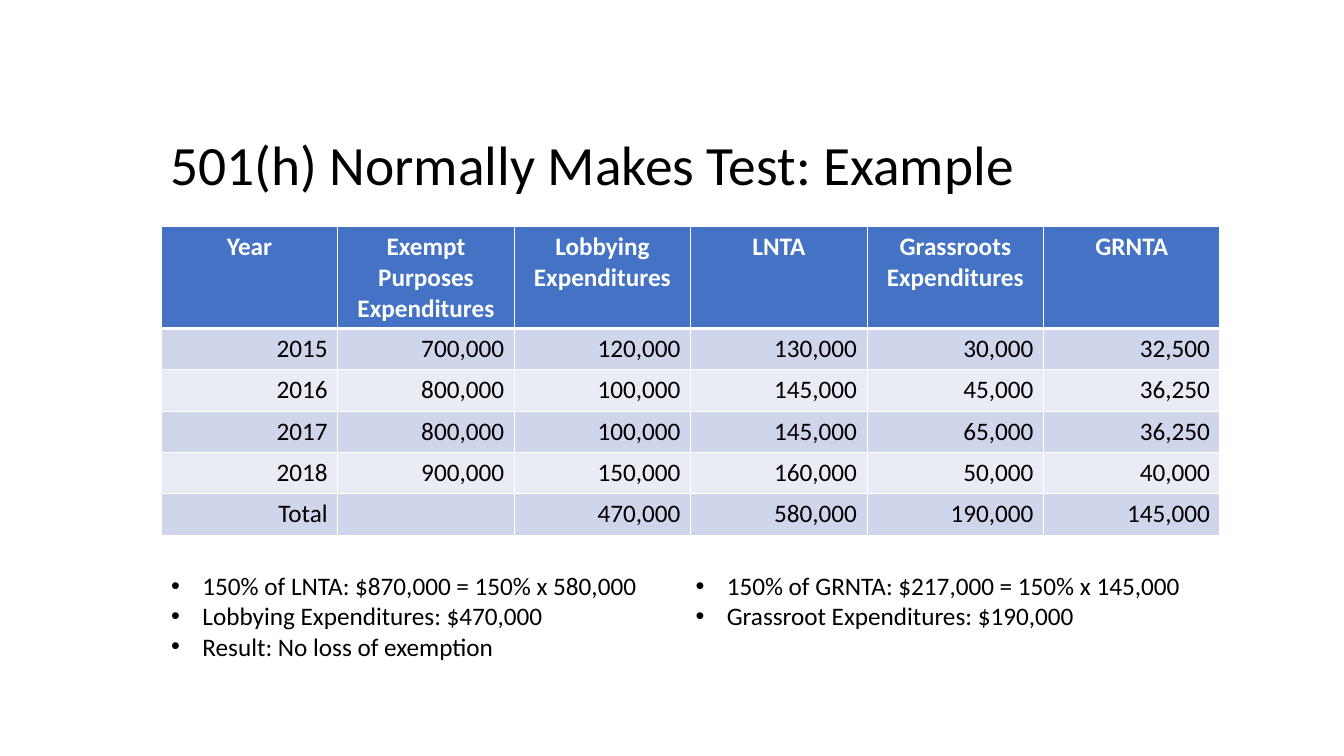
from lxml import etree
from pptx import Presentation
from pptx.dml.color import RGBColor
from pptx.enum.text import MSO_ANCHOR, PP_ALIGN
from pptx.oxml.ns import qn
from pptx.util import Inches, Pt

MIDDLE = MSO_ANCHOR.MIDDLE
LEFT, CENTER, RIGHT = PP_ALIGN.LEFT, PP_ALIGN.CENTER, PP_ALIGN.RIGHT
COLORS = {"text": "000000", "white": "FFFFFF", "head": "4472C4",
          "odd": "CFD5EA", "even": "E9EBF5"}

ROWS = [
    ["Year", "Exempt Purposes Expenditures", "Lobbying Expenditures",
     "LNTA", "Grassroots Expenditures", "GRNTA"],
    ["2015", "700,000", "120,000", "130,000", "30,000", "32,500"],
    ["2016", "800,000", "100,000", "145,000", "45,000", "36,250"],
    ["2017", "800,000", "100,000", "145,000", "65,000", "36,250"],
    ["2018", "900,000", "150,000", "160,000", "50,000", "40,000"],
    ["Total", "", "470,000", "580,000", "190,000", "145,000"],
]
LOBBY = ["150% of LNTA: $870,000 = 150% x 580,000",
         "Lobbying Expenditures: $470,000",
         "Result: No loss of exemption"]
GRASS = ["150% of GRNTA: $217,000 = 150% x 145,000",
         "Grassroot Expenditures: $190,000"]


class Deck:
    font = "Calibri"
    size = 18

    def __init__(self):
        self.prs = Presentation()
        self.prs.slide_width = Inches(13.33)
        self.prs.slide_height = Inches(7.5)
        self.slide = self.prs.slides.add_slide(self.prs.slide_layouts[6])

    def style(self, para, size=size, color="text", bold=False, align=LEFT):
        para.alignment = align
        para.font.name = self.font
        para.font.size = Pt(size)
        para.font.bold = bold
        para.font.color.rgb = RGBColor.from_string(COLORS[color])

    def box(self, left, top, width, height):
        shape = self.slide.shapes.add_textbox(
            Inches(left), Inches(top), Inches(width), Inches(height))
        shape.text_frame.word_wrap = True
        return shape.text_frame

    def title(self, text, *area):
        frame = self.box(*area)
        frame.vertical_anchor = MIDDLE
        frame.margin_top, frame.margin_bottom = Inches(0.6), 0
        para = frame.paragraphs[0]
        para.text = text
        para.line_spacing = 0.9
        self.style(para, 39.6)

    def bullets(self, lines, *area):
        frame = self.box(*area)
        frame.text = "\n".join(lines)
        for para in frame.paragraphs:
            self.style(para)
            props = para._p.get_or_add_pPr()
            props.set("marL", str(Inches(0.31)))
            props.set("indent", str(-Inches(0.31)))
            font = etree.SubElement(props, qn("a:buFont"))
            font.set("typeface", "Arial")
            etree.SubElement(props, qn("a:buChar")).set("char", "•")

    def border(self, cell, side, width):
        line = etree.SubElement(cell._tc.get_or_add_tcPr(), qn("a:ln" + side))
        line.set("w", str(Pt(width)))
        fill = etree.SubElement(line, qn("a:solidFill"))
        etree.SubElement(fill, qn("a:srgbClr")).set("val", COLORS["white"])

    def cell(self, cell, text, row):
        head = row == 0
        # Borders come before the fill; a thick rule sits below the header
        for side in "LRTB":
            thick = (row, side) in ((0, "B"), (1, "T"))
            self.border(cell, side, 3 if thick else 1)
        cell.fill.solid()
        tint = "head" if head else "odd" if row % 2 else "even"
        cell.fill.fore_color.rgb = RGBColor.from_string(COLORS[tint])
        cell.text = text
        self.style(cell.text_frame.paragraphs[0], bold=head,
                   color="white" if head else "text",
                   align=CENTER if head else RIGHT)

    def table(self, rows, left, top, width, first, rest):
        height = first + rest * (len(rows) - 1)
        table = self.slide.shapes.add_table(
            len(rows), len(rows[0]), Inches(left), Inches(top),
            Inches(width), Inches(height)).table
        for i, row in enumerate(rows):
            table.rows[i].height = Inches(rest if i else first)
            for j, text in enumerate(row):
                self.cell(table.cell(i, j), text, i)


def main():
    deck = Deck()
    # Title
    deck.title("501(h) Normally Makes Test: Example", 1.59, 0.79, 10.5, 1.15)
    # Figures by year
    deck.table(ROWS, 1.6, 2.25, 10.5, 1.01, 0.41)
    # Findings
    deck.bullets(LOBBY, 1.6, 5.61, 5.29, 1.01)
    deck.bullets(GRASS, 6.8, 5.61, 5.29, 0.71)
    deck.prs.save("out.pptx")


if __name__ == "__main__":
    main()
